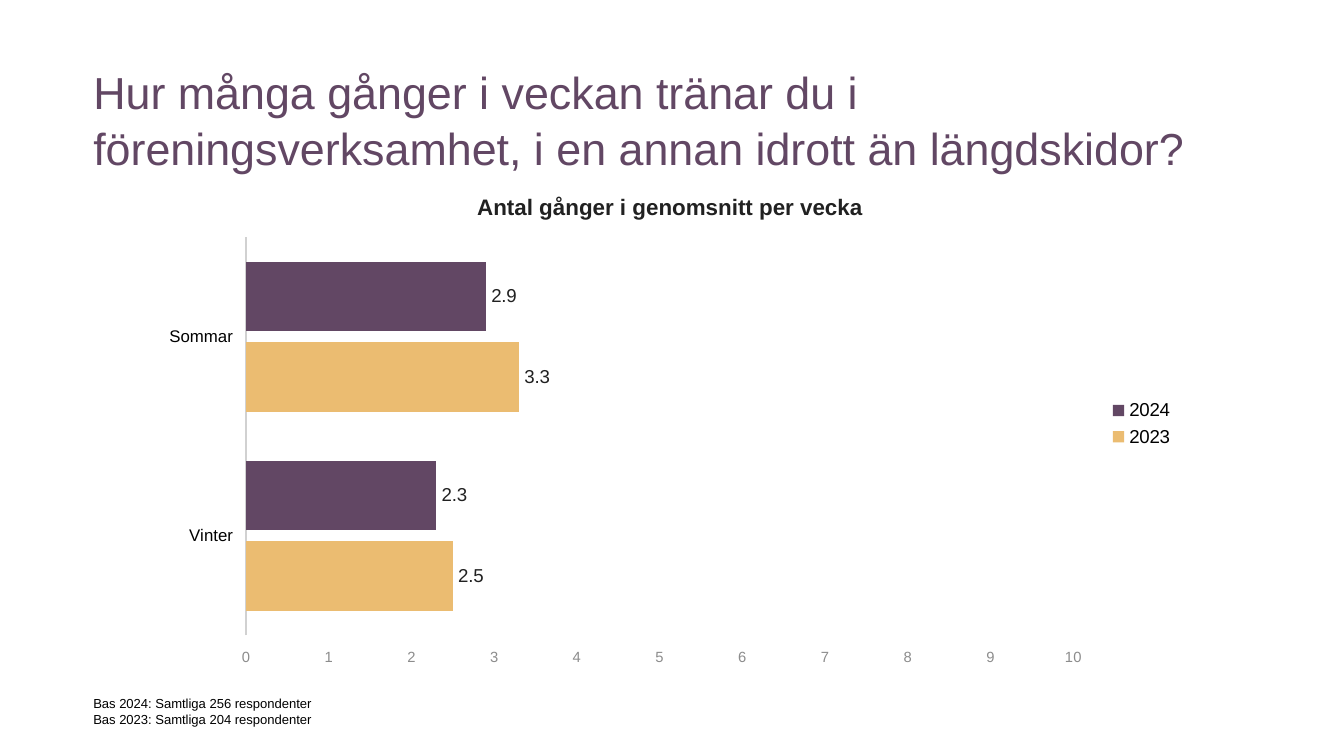
from typing import NamedTuple

from lxml.etree import SubElement
from pptx import Presentation
from pptx.chart.data import CategoryChartData
from pptx.dml.color import RGBColor
from pptx.enum.chart import (XL_CHART_TYPE, XL_LABEL_POSITION,
                             XL_LEGEND_POSITION, XL_TICK_LABEL_POSITION,
                             XL_TICK_MARK)
from pptx.oxml.ns import qn
from pptx.util import Pt

FONT = "Arial"
PURPLE = RGBColor(0x62, 0x47, 0x64)
AMBER = RGBColor(0xEB, 0xBC, 0x71)
BLACK = RGBColor(0x00, 0x00, 0x00)
DARK = RGBColor(0x21, 0x21, 0x21)
GREY = RGBColor(0x8C, 0x8C, 0x8C)
LIGHT = RGBColor(0xD1, 0xD1, 0xD1)


class Box(NamedTuple):
    left: float
    top: float
    width: float
    height: float


class YearSeries(NamedTuple):
    name: str
    values: tuple[float, ...]
    color: RGBColor


CATEGORIES = ("Vinter", "Sommar")
SERIES = (
    YearSeries("2023", (2.5, 3.3), AMBER),
    YearSeries("2024", (2.3, 2.9), PURPLE),
)
PLOT_AREA = Box(0.09, 0.13, 0.8, 0.79)  # fractions of the chart


def set_font(font, size: float, color: RGBColor, bold: bool = False) -> None:
    font.name, font.size, font.bold = FONT, Pt(size), bold
    font.color.rgb = color


def add_text(slide, box: Box, *lines: str, size: float, color: RGBColor) -> None:
    tf = slide.shapes.add_textbox(*map(Pt, box)).text_frame
    tf.word_wrap = True
    tf.margin_left = tf.margin_right = tf.margin_top = tf.margin_bottom = 0
    for i, line in enumerate(lines):
        p = tf.paragraphs[0] if i == 0 else tf.add_paragraph()
        p.line_spacing = 1.05
        r = p.add_run()
        r.text = line
        set_font(r.font, size, color)


def set_plot_layout(chart, area: Box) -> None:
    """Fix the inner plot area, given as fractions of the chart."""
    plot_area = chart.plots[0]._element.getparent()
    layout = plot_area.find(qn("c:layout"))
    if layout is None:
        layout = SubElement(plot_area, qn("c:layout"))
        plot_area.insert(0, layout)
    manual = SubElement(layout, qn("c:manualLayout"))
    settings = [("layoutTarget", "inner"), ("xMode", "edge"), ("yMode", "edge")]
    settings += zip("xywh", map(str, area))
    for tag, value in settings:
        SubElement(manual, qn(f"c:{tag}")).set("val", value)


def style_axis(axis, size: float, color: RGBColor) -> None:
    axis.has_major_gridlines = False
    axis.major_tick_mark = axis.minor_tick_mark = XL_TICK_MARK.NONE
    axis.tick_label_position = XL_TICK_LABEL_POSITION.LOW
    set_font(axis.tick_labels.font, size, color)


def add_bar_chart(slide, box: Box, title: str) -> None:
    data = CategoryChartData(number_format="0.0")
    data.categories = CATEGORIES
    for item in SERIES:
        data.add_series(item.name, item.values)
    chart = slide.shapes.add_chart(
        XL_CHART_TYPE.BAR_CLUSTERED, *map(Pt, box), data).chart
    set_font(chart.font, 10, DARK)

    chart.has_title = True
    tf = chart.chart_title.text_frame
    tf.text = title
    set_font(tf.paragraphs[0].runs[0].font, 12, DARK, bold=True)
    chart.chart_title.include_in_layout = False

    chart.has_legend = True
    chart.legend.position = XL_LEGEND_POSITION.RIGHT
    chart.legend.include_in_layout = False
    set_font(chart.legend.font, 10, BLACK)

    style_axis(chart.category_axis, 9, BLACK)
    chart.category_axis.format.line.color.rgb = LIGHT
    chart.category_axis.format.line.width = Pt(0.75)

    values = chart.value_axis
    style_axis(values, 7.9, GREY)
    values.format.line.fill.background()
    values.minimum_scale, values.maximum_scale, values.major_unit = 0, 10, 1
    values.tick_labels.number_format = "General"
    values.tick_labels.number_format_is_linked = False

    plot = chart.plots[0]
    plot.vary_by_categories = False
    plot.gap_width, plot.overlap = 70, -16
    for series, item in zip(plot.series, SERIES):
        series.format.fill.solid()
        series.format.fill.fore_color.rgb = item.color
        labels = series.data_labels
        labels.show_value = True
        labels.position = XL_LABEL_POSITION.OUTSIDE_END
        labels.number_format = "0.0"
        labels.number_format_is_linked = False
        set_font(labels.font, 10, DARK)
    set_plot_layout(chart, PLOT_AREA)


def main() -> None:
    prs = Presentation()
    prs.slide_width, prs.slide_height = Pt(720), Pt(405)
    s = prs.slides.add_slide(prs.slide_layouts[6])
    add_text(s, Box(50, 33, 618, 59),
             "Hur många gånger i veckan tränar du i "
             "föreningsverksamhet, i en annan idrott än längdskidor?",
             size=24, color=PURPLE)
    add_bar_chart(s, Box(82, 92, 554, 270), "Antal gånger i genomsnitt per vecka")
    add_text(s, Box(50, 372, 130, 22),
             "Bas 2024: Samtliga 256 respondenter",
             "Bas 2023: Samtliga 204 respondenter",
             size=7, color=BLACK)
    prs.save("out.pptx")


if __name__ == "__main__":
    main()
